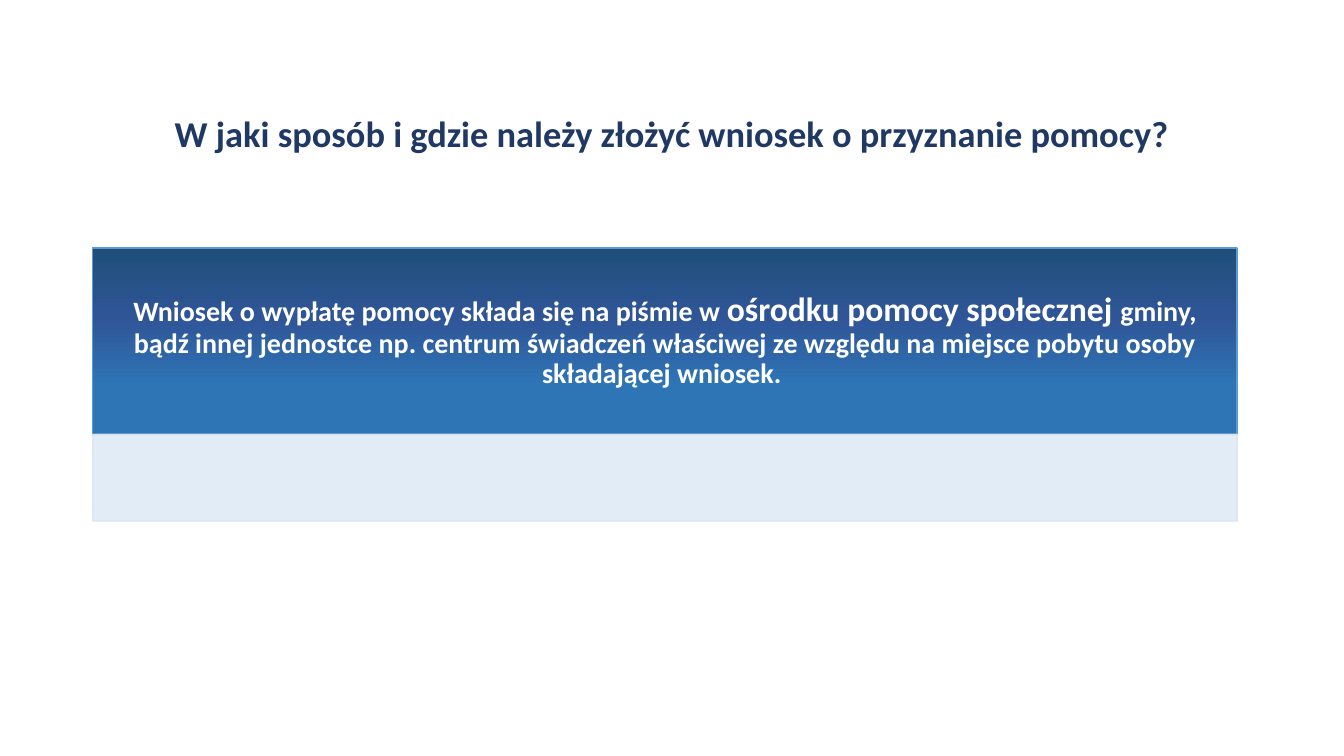
from copy import deepcopy

from lxml import etree
from pptx import Presentation
from pptx.dml.color import RGBColor
from pptx.enum.shapes import MSO_SHAPE
from pptx.enum.text import MSO_ANCHOR, PP_ALIGN
from pptx.oxml.ns import qn
from pptx.util import Inches, Pt

RECTANGLE = MSO_SHAPE.RECTANGLE
MIDDLE = MSO_ANCHOR.MIDDLE
CENTER = PP_ALIGN.CENTER

QUESTION = "W jaki sposób i gdzie należy złożyć wniosek o przyznanie pomocy?"
ANSWER = [
    ("Wniosek o wypłatę pomocy składa się na piśmie w ", "body"),
    ("ośrodku pomocy społecznej ", "emphasis"),
    ("gminy, bądź innej jednostce np. centrum świadczeń właściwej "
     "ze względu na miejsce pobytu osoby składającej wniosek. ", "body"),
]

THEME = {
    "font": "Calibri",
    "size": {"title": 26, "body": 20, "emphasis": 24},
    "title": "203864",
    "answer_text": "FFFFFF",
    "answer_gradient": [(0, "1F4E79"), (37, "2F5597"), (74, "2E75B6")],
    "answer_line": "5B9BD5",
    "strip_fill": "DEEBF7",
    "strip_line": "DAE3F3",
    "strip_opacity": 90,
}

LEFT = 0.92
TITLE_TOP, TITLE_WIDTH, TITLE_HEIGHT = 0.87, 11.5, 0.95
PANEL_TOP, PANEL_WIDTH = 2.46, 11.35
ANSWER_HEIGHT, STRIP_HEIGHT = 1.85, 0.86


def add_panel(slide, top, height, line_color):
    panel = slide.shapes.add_shape(
        RECTANGLE, Inches(LEFT), Inches(top), Inches(PANEL_WIDTH), Inches(height))
    panel.shadow.inherit = False
    panel.line.color.rgb = RGBColor.from_string(line_color)
    panel.line.width = Pt(1)
    return panel


def fill_downward(shape, stops):
    """Fill with a top-to-bottom gradient of (percent, colour) stops."""
    shape.fill.gradient()
    shape.fill.gradient_angle = 270
    stop_list = shape._element.spPr.find(qn("a:gradFill")).find(qn("a:gsLst"))
    while len(stop_list) < len(stops):
        stop_list.append(deepcopy(stop_list[-1]))
    for stop, (percent, color) in zip(shape.fill.gradient_stops, stops):
        stop.position = percent / 100
        stop.color.rgb = RGBColor.from_string(color)


def set_opacity(shape, percent):
    for color in shape._element.spPr.iter(qn("a:srgbClr")):
        etree.SubElement(color, qn("a:alpha")).set("val", str(percent * 1000))


def write_centered(frame, runs, color):
    """Write (text, size name) runs as one bold, centred paragraph."""
    frame.word_wrap = True
    frame.vertical_anchor = MIDDLE
    paragraph = frame.paragraphs[0]
    paragraph.alignment = CENTER
    paragraph.line_spacing = 0.9
    paragraph.font.name = THEME["font"]
    paragraph.font.bold = True
    paragraph.font.color.rgb = RGBColor.from_string(color)
    for text, size in runs:
        run = paragraph.add_run()
        run.text = text
        run.font.size = Pt(THEME["size"][size])


def main():
    deck = Presentation()
    deck.slide_width, deck.slide_height = Inches(13.33), Inches(7.5)
    slide = deck.slides.add_slide(deck.slide_layouts[6])

    title = slide.shapes.add_textbox(
        Inches(LEFT), Inches(TITLE_TOP), Inches(TITLE_WIDTH), Inches(TITLE_HEIGHT))
    write_centered(title.text_frame, [(QUESTION, "title")], THEME["title"])

    answer = add_panel(slide, PANEL_TOP, ANSWER_HEIGHT, THEME["answer_line"])
    fill_downward(answer, THEME["answer_gradient"])
    frame = answer.text_frame
    frame.margin_left = frame.margin_right = Inches(0.16)
    frame.margin_top = frame.margin_bottom = Inches(0.09)
    write_centered(frame, ANSWER, THEME["answer_text"])

    strip = add_panel(slide, PANEL_TOP + ANSWER_HEIGHT, STRIP_HEIGHT, THEME["strip_line"])
    strip.fill.solid()
    strip.fill.fore_color.rgb = RGBColor.from_string(THEME["strip_fill"])
    set_opacity(strip, THEME["strip_opacity"])

    deck.save("out.pptx")


if __name__ == "__main__":
    main()
